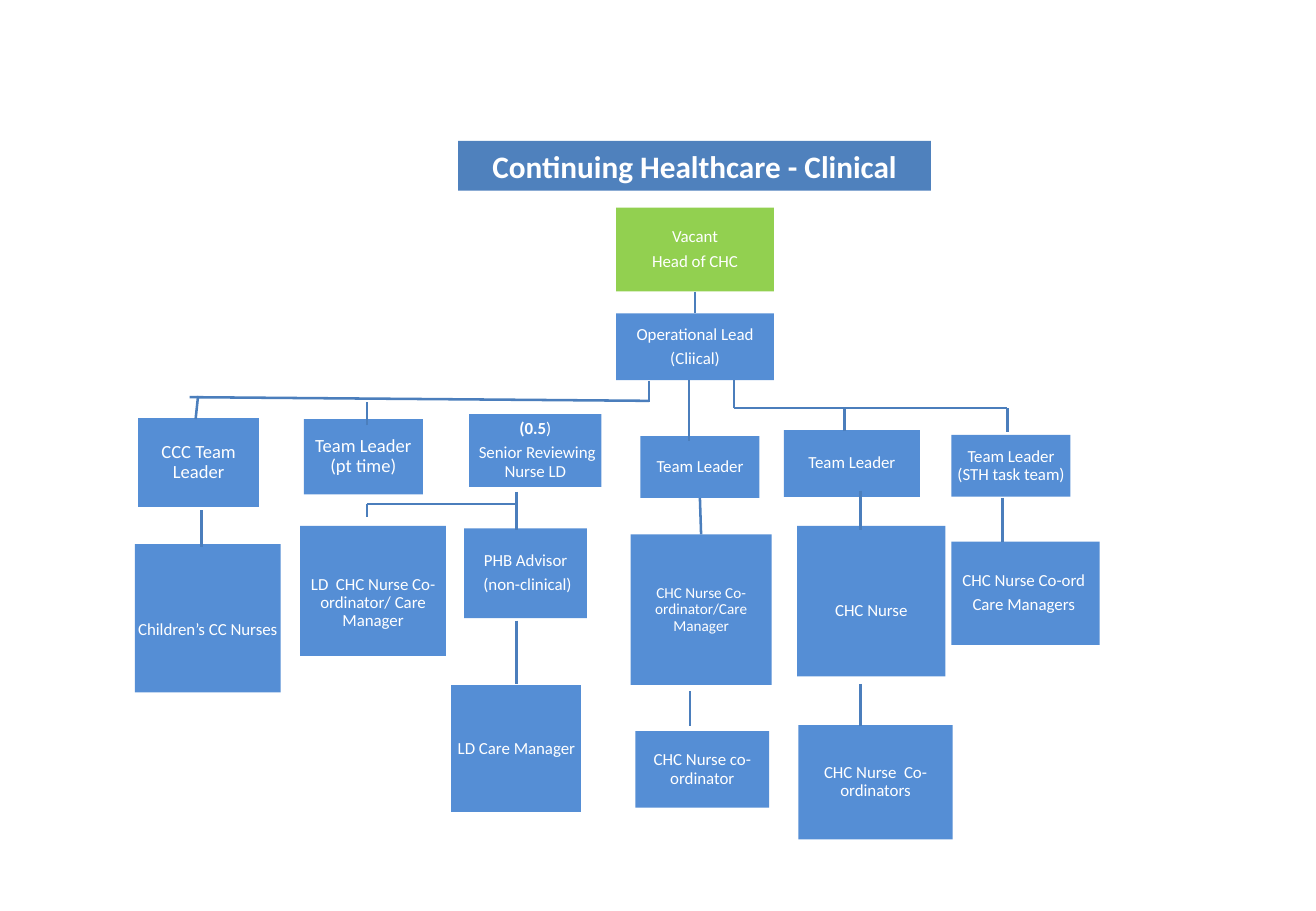
from dataclasses import dataclass
from pptx import Presentation
from pptx.dml.color import RGBColor as Rgb
from pptx.enum.shapes import MSO_CONNECTOR as Link, MSO_SHAPE as Form
from pptx.enum.text import MSO_ANCHOR as Anchor, PP_ALIGN as Align
from pptx.oxml.ns import qn
from pptx.util import Inches, Pt
from lxml.etree import SubElement


@dataclass
class Theme:
    font: str = "Calibri"
    white: str = "FFFFFF"
    green: str = "92D050"
    blue: str = "558ED5"
    band: str = "4F81BD"
    wire: str = "4B7EBC"
    title: float = 18.5
    large: float = 11
    body: float = 10
    small: float = 9


theme = Theme()


def write(shape, text, size=theme.body, lead="", bold=False, drop=0, pad=(0, 0), tight=True):
    frame = shape.text_frame
    frame.word_wrap = True
    frame.vertical_anchor = Anchor.MIDDLE
    frame.margin_left = frame.margin_right = Inches(pad[0])
    frame.margin_top = Inches(pad[1] + drop)
    frame.margin_bottom = Inches(pad[1])
    for i, line in enumerate(text.split("\n")):
        para = frame.paragraphs[0] if i == 0 else frame.add_paragraph()
        para.alignment = Align.CENTER
        if tight:
            para.line_spacing = 0.9
            para.space_after = Pt(size * 0.35)
        head = lead if i == 0 else ""
        for part, heavy in ((head, True), (line, bold)):
            if part:
                run = para.add_run()
                run.text = part
                font = run.font
                font.name, font.size, font.bold = theme.font, Pt(size), heavy
                font.color.rgb = Rgb.from_string(theme.white)


def block(slide, spot, fill, edge=False):
    shape = slide.shapes.add_shape(Form.RECTANGLE, *map(Inches, spot))
    shape.shadow.inherit = False
    shape.fill.solid()
    shape.fill.fore_color.rgb = Rgb.from_string(fill)
    if edge:
        shape.line.color.rgb = Rgb.from_string(theme.white)
        shape.line.width = Pt(2)
    else:
        shape.line.fill.background()
    return shape


deck = Presentation()
deck.slide_width, deck.slide_height = Inches(10.83), Inches(7.5)
slide = deck.slides.add_slide(deck.slide_layouts[6])

title = block(slide, (3.77, 1.16, 3.89, 0.41), theme.band)
write(title, "Continuing Healthcare - Clinical", size=theme.title, bold=True,
      pad=(0.1, 0.05), tight=False)

posts = {
    "head": ((5.07, 1.71, 1.3, 0.69), "Vacant\nHead of CHC", {}),
    "lead": ((5.07, 2.58, 1.3, 0.55), "Operational Lead\n(Cliical)", {}),
    "child lead": ((1.12, 3.43, 1.03, 0.76), "CCC Team Leader", {"size": theme.large}),
    "child nurse": ((1.11, 4.48, 1.2, 1.22), "Children’s CC Nurses", {"drop": 0.2}),
    "part lead": ((2.5, 3.45, 0.98, 0.62), "Team Leader (pt time)", {"size": theme.large}),
    "part nurse": ((2.47, 4.33, 1.2, 1.07), "LD  CHC Nurse Co-ordinator/ Care Manager",
                   {"drop": 0.2}),
    "senior": ((3.86, 3.41, 1.09, 0.6), ")\n Senior Reviewing Nurse LD", {"lead": "(0.5"}),
    "advisor": ((3.82, 4.35, 1.01, 0.74), "PHB Advisor\n (non-clinical)", {}),
    "care": ((3.7, 5.63, 1.1, 1.07), "LD Care Manager", {}),
    "mid lead": ((5.27, 3.59, 0.98, 0.51), "Team Leader", {}),
    "mid nurse": ((5.19, 4.4, 1.16, 1.24), "CHC Nurse Co-ordinator/Care Manager",
                  {"size": theme.small}),
    "mid staff": ((5.23, 6.02, 1.1, 0.63), "CHC Nurse co-ordinator", {}),
    "next lead": ((6.45, 3.54, 1.12, 0.55), "Team Leader", {}),
    "next nurse": ((6.56, 4.33, 1.22, 1.24), "CHC Nurse", {"drop": 0.16}),
    "next staff": ((6.57, 5.97, 1.27, 0.94), "CHC Nurse  Co-ordinators", {}),
    "task lead": ((7.83, 3.58, 0.98, 0.51), "Team Leader (STH task team)", {}),
    "task nurse": ((7.83, 4.46, 1.22, 0.85), "CHC Nurse Co-ord \nCare Managers ", {}),
}
boxes = {}
for name, (spot, text, look) in posts.items():
    fill = theme.green if name == "head" else theme.blue
    boxes[name] = block(slide, spot, fill, edge=name in ("child lead", "care"))
    write(boxes[name], text, **look)

wires = [
    (5.72, 2.4, 5.72, 2.58, "head", "lead"),
    (5.34, 3.3, 1.56, 3.27, None, None),
    (5.34, 3.31, 5.34, 3.14, None, None),
    (1.63, 3.26, 1.61, 3.45, None, None),
    (1.66, 4.2, 1.66, 4.5, None, None),
    (3.02, 3.5, 3.02, 3.31, None, None),
    (4.26, 4.15, 3.02, 4.15, None, None),
    (3.02, 4.15, 3.02, 4.26, None, None),
    (4.25, 4.05, 4.25, 4.36, None, None),
    (4.25, 5.11, 4.25, 5.63, None, "care"),
    (5.67, 3.63, 5.67, 3.13, None, None),
    (5.76, 4.1, 5.77, 4.4, "mid lead", "mid nurse"),
    (5.68, 5.69, 5.68, 5.98, None, None),
    (6.04, 3.36, 6.04, 3.13, None, None),
    (6.04, 3.36, 8.29, 3.36, None, None),
    (6.95, 3.55, 6.95, 3.36, None, None),
    (7.08, 4.04, 7.08, 4.36, None, None),
    (7.08, 5.63, 7.08, 5.98, None, None),
    (8.29, 3.36, 8.29, 3.56, None, None),
    (8.25, 4.1, 8.25, 4.46, None, None),
]
for *ends, top, base in wires:
    wire = slide.shapes.add_connector(Link.STRAIGHT, *map(Inches, ends))
    wire.line.color.rgb = Rgb.from_string(theme.wire)
    wire.line.width = Pt(1.5)
    SubElement(wire._element.spPr, qn("a:effectLst"))
    if top:
        wire.begin_connect(boxes[top], 2)
    if base:
        wire.end_connect(boxes[base], 0)

deck.save("out.pptx")
